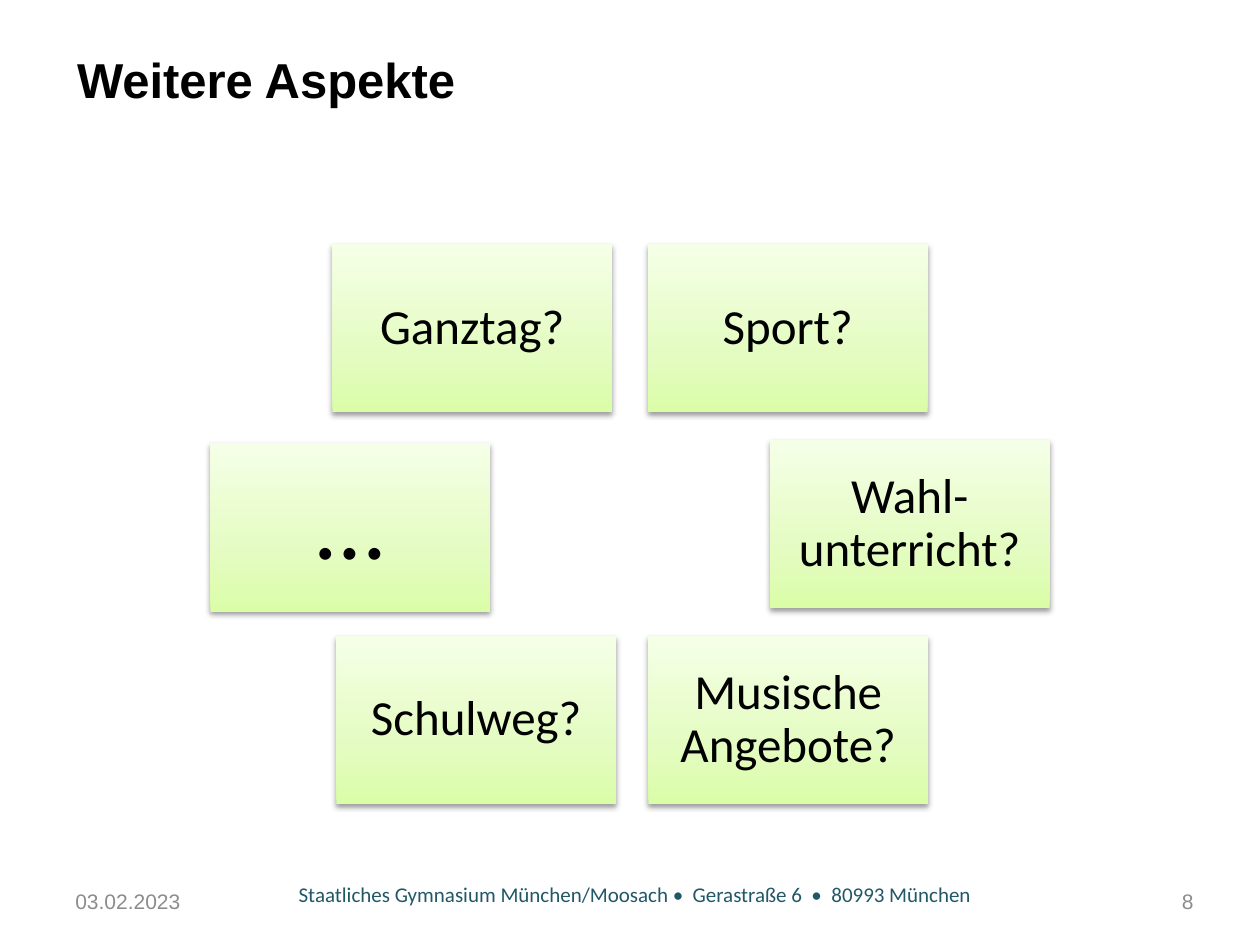
from copy import deepcopy
from dataclasses import dataclass

from lxml.etree import SubElement
from pptx import Presentation
from pptx.dml.color import RGBColor
from pptx.enum.shapes import MSO_SHAPE
from pptx.enum.text import MSO_ANCHOR as Anchor, MSO_AUTO_SIZE, PP_ALIGN as Align
from pptx.oxml.ns import qn
from pptx.util import Cm, Pt

BLACK = RGBColor(0x00, 0x00, 0x00)
GREY = RGBColor(0x8C, 0x8C, 0x8C)
TEAL = RGBColor(0x21, 0x58, 0x68)
# Gradient from the bottom edge to the top edge
GREENS = (
    (0, RGBColor(0xDA, 0xFD, 0xA7)),
    (0.35, RGBColor(0xE4, 0xFC, 0xC2)),
    (1, RGBColor(0xF5, 0xFF, 0xE7)),
)

CARD_WIDTH, CARD_HEIGHT = Cm(5.64), Cm(3.39)
FOOTER_TOP, FOOTER_HEIGHT = Cm(17.65), Cm(1.02)


@dataclass
class Aspect:
    text: str
    left: float
    top: float
    size: int = 28
    inset: float = 0.3


@dataclass
class FooterPart:
    text: str
    left: float
    width: float
    font: str
    color: RGBColor
    align: Align
    anchor: Anchor


ASPECTS = (
    Aspect("Ganztag?", 6.7, 4.92),
    Aspect("Sport?", 13.06, 4.92),
    Aspect("Wahl-unterricht?", 15.52, 8.87),
    Aspect("Musische Angebote?", 13.07, 12.82),
    Aspect("Schulweg?", 6.78, 12.82),
    Aspect("…", 4.24, 8.94, size=56, inset=0.58),
)

FOOTER = (
    FooterPart("03.02.2023", 1.27, 2.82, "Arial", GREY, Align.LEFT, Anchor.MIDDLE),
    FooterPart("Staatliches Gymnasium München/Moosach •  Gerastraße 6  •  80993 München",
               4.5, 16.61, "Calibri", TEAL, Align.CENTER, Anchor.TOP),
    FooterPart("8", 21.49, 2.82, "Arial", GREY, Align.RIGHT, Anchor.MIDDLE),
)


def format_paragraph(paragraph, font: str, size: int, color: RGBColor, align: Align) -> None:
    paragraph.alignment = align
    paragraph.font.name = font
    paragraph.font.size = Pt(size)
    paragraph.font.color.rgb = color


def fill_green(card) -> None:
    card.fill.gradient()
    card.fill.gradient_angle = 90
    first = card.fill._fill._gradFill.find(qn("a:gsLst"))[0]
    first.addnext(deepcopy(first))
    for stop, (position, color) in zip(card.fill.gradient_stops, GREENS):
        stop.position = position
        stop.color.rgb = color


def add_soft_shadow(card) -> None:
    card.shadow.inherit = False
    effects = card._element.spPr.find(qn("a:effectLst"))
    shadow = SubElement(effects, qn("a:outerShdw"), blurRad="40000", dist="20000",
                        dir="5400000", rotWithShape="0")
    black = SubElement(shadow, qn("a:srgbClr"), val="000000")
    SubElement(black, qn("a:alpha"), val="38000")


def add_aspect(slide, aspect: Aspect) -> None:
    card = slide.shapes.add_shape(MSO_SHAPE.RECTANGLE, Cm(aspect.left), Cm(aspect.top),
                                  CARD_WIDTH, CARD_HEIGHT)
    fill_green(card)
    card.line.fill.background()
    add_soft_shadow(card)
    frame = card.text_frame
    frame.word_wrap = True
    frame.vertical_anchor = Anchor.MIDDLE
    frame.margin_left = frame.margin_right = Cm(aspect.inset)
    frame.margin_top = frame.margin_bottom = Cm(aspect.inset)
    frame.text = aspect.text
    label = frame.paragraphs[0]
    label.line_spacing = 0.9
    format_paragraph(label, "Calibri", aspect.size, BLACK, Align.CENTER)


def add_footer_part(slide, part: FooterPart) -> None:
    box = slide.shapes.add_textbox(Cm(part.left), FOOTER_TOP, Cm(part.width), FOOTER_HEIGHT)
    frame = box.text_frame
    frame.word_wrap = True
    frame.vertical_anchor = part.anchor
    frame.text = part.text
    format_paragraph(frame.paragraphs[0], part.font, 12, part.color, part.align)


def main() -> None:
    presentation = Presentation()
    presentation.slide_width, presentation.slide_height = Cm(25.4), Cm(19.05)
    slide = presentation.slides.add_slide(presentation.slide_layouts[5])

    # Title
    title = slide.shapes.title
    title.left, title.top, title.width, title.height = Cm(1.3), Cm(0.91), Cm(22.86), Cm(1.5)
    title.text_frame.text = "Weitere Aspekte"
    title.text_frame.auto_size = MSO_AUTO_SIZE.NONE
    title.text_frame.vertical_anchor = Anchor.MIDDLE
    heading = title.text_frame.paragraphs[0]
    heading.line_spacing = 0.9
    format_paragraph(heading, "Arial", 28, BLACK, Align.LEFT)
    heading.font.bold = True

    # Ring of aspects
    for aspect in ASPECTS:
        add_aspect(slide, aspect)

    # Footer
    for part in FOOTER:
        add_footer_part(slide, part)

    presentation.save("out.pptx")


if __name__ == "__main__":
    main()
